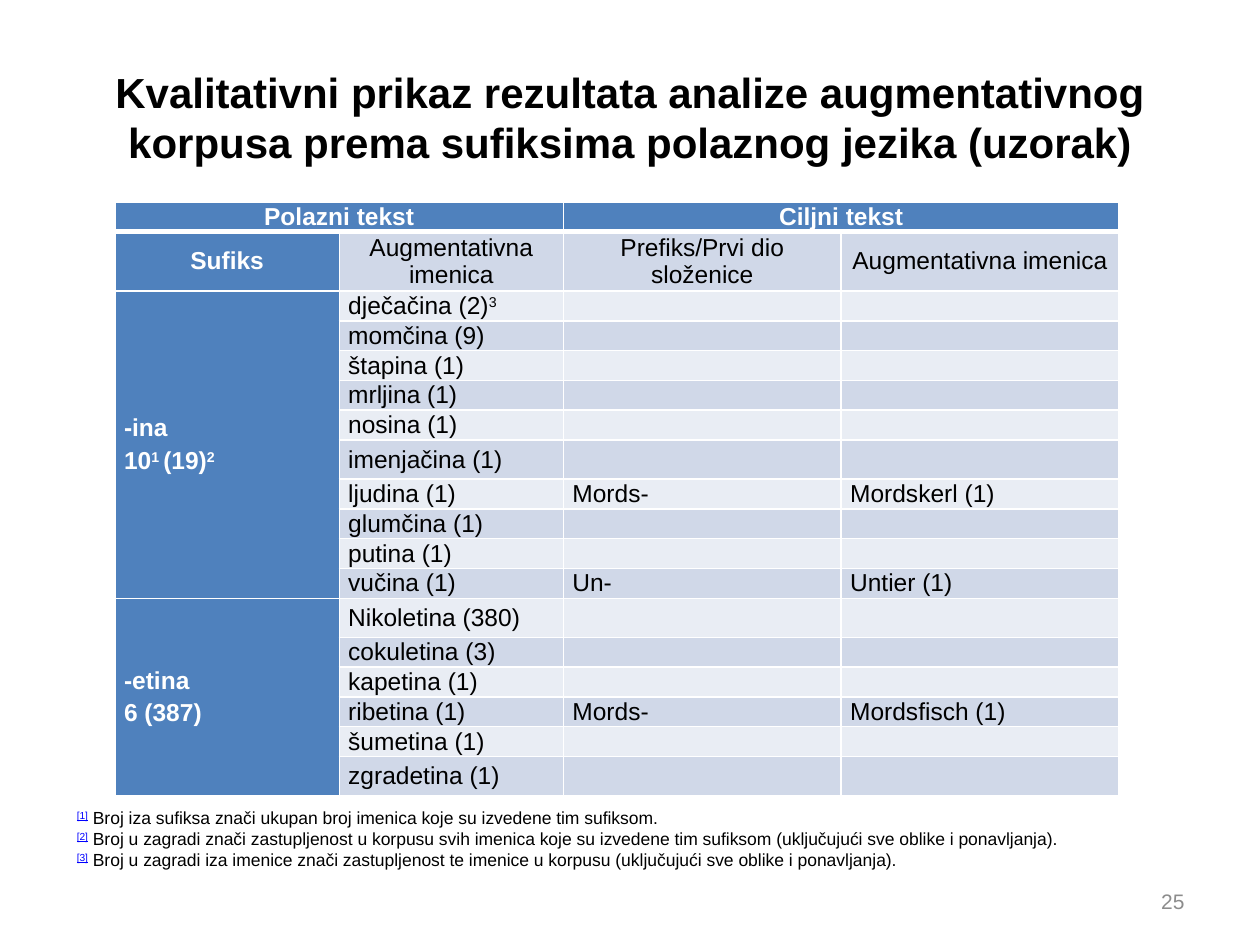
from dataclasses import dataclass

from lxml.etree import SubElement as Sub
from pptx import Presentation
from pptx.dml.color import RGBColor as Rgb
from pptx.enum.text import MSO_ANCHOR as Anchor, MSO_AUTO_SIZE as Fit, PP_ALIGN as Align
from pptx.oxml.ns import qn
from pptx.util import Cm, Pt


@dataclass(frozen=True)
class Theme:
    """Colours, font and type sizes."""
    font: str = "Arial"
    ink: str = "000000"
    white: str = "FFFFFF"
    head: str = "4F81BD"
    bands: tuple = ("E9EDF4", "D0D8E8")
    link: str = "0000FF"
    grey: str = "8C8C8C"
    title: int = 24
    cell: int = 14
    note: int = 10
    num: int = 12


SUFFIXES = (
    (("-ina", "10^1 ^(19)^2"), (
        ("dječačina (2)^3",), ("momčina (9)",), ("štapina (1)",),
        ("mrljina (1)",), ("nosina (1)",), ("imenjačina (1)",),
        ("ljudina (1)", "Mords-", "Mordskerl (1)"), ("glumčina (1)",),
        ("putina (1)",), ("vučina (1)", "Un-", "Untier (1)"))),
    (("-etina", "6 (387)"), (
        ("Nikoletina (380)",), ("cokuletina (3)",), ("kapetina (1)",),
        ("ribetina (1)", "Mords-", "Mordsfisch (1)"),
        ("šumetina (1)",), ("zgradetina (1)",))),
)
HEADS = ("Sufiks", "Augmentativna imenica", "Prefiks/Prvi dio složenice",
         "Augmentativna imenica")
NOTES = (
    "Broj iza sufiksa znači ukupan broj imenica koje su izvedene tim sufiksom.",
    "Broj u zagradi znači zastupljenost u korpusu svih imenica koje su izvedene "
    "tim sufiksom (uključujući sve oblike i ponavljanja).",
    "Broj u zagradi iza imenice znači zastupljenost te imenice u korpusu "
    "(uključujući sve oblike i ponavljanja).",
)
WIDTHS = (4.52, 4.52, 5.6, 5.6)
LOW, MID, HIGH = 0.6, 0.79, 1.2
TALL = {1: HIGH, 7: MID, 12: MID, 17: MID}


class Page:
    """Style and current slide, with one method per kind of element."""

    def __init__(self, slide, theme):
        self.slide, self.theme = slide, theme

    def run(self, para, text, size, color, bold=False, sup=False, line=False):
        """Add one styled run."""
        run = para.add_run()
        run.text = text
        font = run.font
        font.name, font.size, font.bold = self.theme.font, Pt(size), bold
        font.color.rgb = Rgb.from_string(color)
        if line:
            font.underline = True
        if sup:
            run._r.get_or_add_rPr().set("baseline", "30000")

    def title(self, text, box):
        """Fill and place the title placeholder."""
        shape = self.slide.shapes.title
        shape.left, shape.top, shape.width, shape.height = map(Cm, box)
        frame = shape.text_frame
        frame.auto_size, frame.vertical_anchor = Fit.NONE, Anchor.MIDDLE
        para = frame.paragraphs[0]
        para.alignment = Align.CENTER
        self.run(para, text, self.theme.title, self.theme.ink, bold=True)

    def box(self, area):
        """Add a wrapped text box and return its frame."""
        frame = self.slide.shapes.add_textbox(*map(Cm, area)).text_frame
        frame.word_wrap, frame.vertical_anchor = True, Anchor.MIDDLE
        return frame

    def notes(self, texts, area):
        """Add numbered footnotes."""
        look, frame = self.theme, self.box(area)
        for i, text in enumerate(texts):
            para = frame.add_paragraph() if i else frame.paragraphs[0]
            para.alignment = Align.JUSTIFY
            self.run(para, f"[{i + 1}]", look.note, look.link, sup=True, line=True)
            self.run(para, f" {text}", look.note, look.ink)

    def number(self, text, area):
        """Add the page number."""
        para = self.box(area).paragraphs[0]
        para.alignment = Align.RIGHT
        self.run(para, text, self.theme.num, self.theme.grey)

    def edges(self, cell, row):
        """Draw white cell borders, thick below the first row."""
        props = cell._tc.get_or_add_tcPr()
        for side in "LRTB":
            thick = (row, side) in ((0, "B"), (1, "T"))
            line = Sub(props, qn(f"a:ln{side}"), w=str(Pt(3 if thick else 1)))
            Sub(Sub(line, qn("a:solidFill")), qn("a:srgbClr"), val=self.theme.white)

    def cell(self, cell, lines, color, bold, align):
        """Write lines into a cell; a caret toggles superscript."""
        frame, size = cell.text_frame, self.theme.cell
        for i, text in enumerate(lines):
            para = frame.add_paragraph() if i else frame.paragraphs[0]
            para.alignment, para.space_after = align, Pt(3)
            for j, part in enumerate(text.split("^")):
                self.run(para, part, size, color, bold, sup=j % 2 == 1)

    def table(self, spot, widths, heights):
        """Add a banded table with a dark header row and first column."""
        look = self.theme
        table = self.slide.shapes.add_table(
            len(heights), len(widths), *map(Cm, spot),
            Cm(sum(widths)), Cm(sum(heights))).table
        table.first_row = table.horz_banding = False
        for col, width in zip(table.columns, widths):
            col.width = Cm(width)
        for r, height in enumerate(heights):
            table.rows[r].height = Cm(height)
            for c in range(len(widths)):
                cell = table.cell(r, c)
                cell.margin_left = cell.margin_right = Cm(0.18)
                cell.margin_top = cell.margin_bottom = 0
                cell.vertical_anchor = Anchor.MIDDLE
                self.edges(cell, r)
                cell.fill.solid()
                dark = r == 0 or c == 0
                cell.fill.fore_color.rgb = Rgb.from_string(
                    look.head if dark else look.bands[r % 2])
        return table

    def corpus(self, spot):
        """Add the table of suffixes and nouns."""
        look = self.theme
        count = 2 + sum(len(nouns) for _, nouns in SUFFIXES)
        table = self.table(spot, WIDTHS, [TALL.get(r, LOW) for r in range(count)])
        for c, text in ((0, "Polazni tekst"), (2, "Ciljni tekst")):
            table.cell(0, c).merge(table.cell(0, c + 1))
            self.cell(table.cell(0, c), [text], look.white, True, Align.CENTER)
        for c, text in enumerate(HEADS):
            color = look.ink if c else look.white
            self.cell(table.cell(1, c), [text], color, c == 0, Align.CENTER)
        top = 2
        for label, nouns in SUFFIXES:
            table.cell(top, 0).merge(table.cell(top + len(nouns) - 1, 0))
            self.cell(table.cell(top, 0), label, look.white, True, Align.LEFT)
            for r, words in enumerate(nouns, top):
                for c, word in enumerate(words, 1):
                    self.cell(table.cell(r, c), [word], look.ink, False, Align.LEFT)
            top += len(nouns)
        for cell in table.iter_cells():
            if not cell.text_frame.text:
                para = cell.text_frame.paragraphs[0]
                Sub(para._p, qn("a:endParaRPr"), sz=str(look.cell * 100))


def main():
    """Build and save the slide."""
    deck = Presentation()
    deck.slide_width, deck.slide_height = Cm(25.4), Cm(19.05)
    page = Page(deck.slides.add_slide(deck.slide_layouts[5]), Theme())
    page.title("Kvalitativni prikaz rezultata analize augmentativnog "
               "korpusa prema sufiksima polaznog jezika (uzorak)",
               (1.27, 0.76, 22.86, 3.18))
    page.notes(NOTES, (1.3, 16.13, 21.6, 1.55))
    page.corpus((2.32, 4.07))
    page.number("25", (18.2, 17.66, 5.93, 1.01))
    deck.save("out.pptx")


if __name__ == "__main__":
    main()
